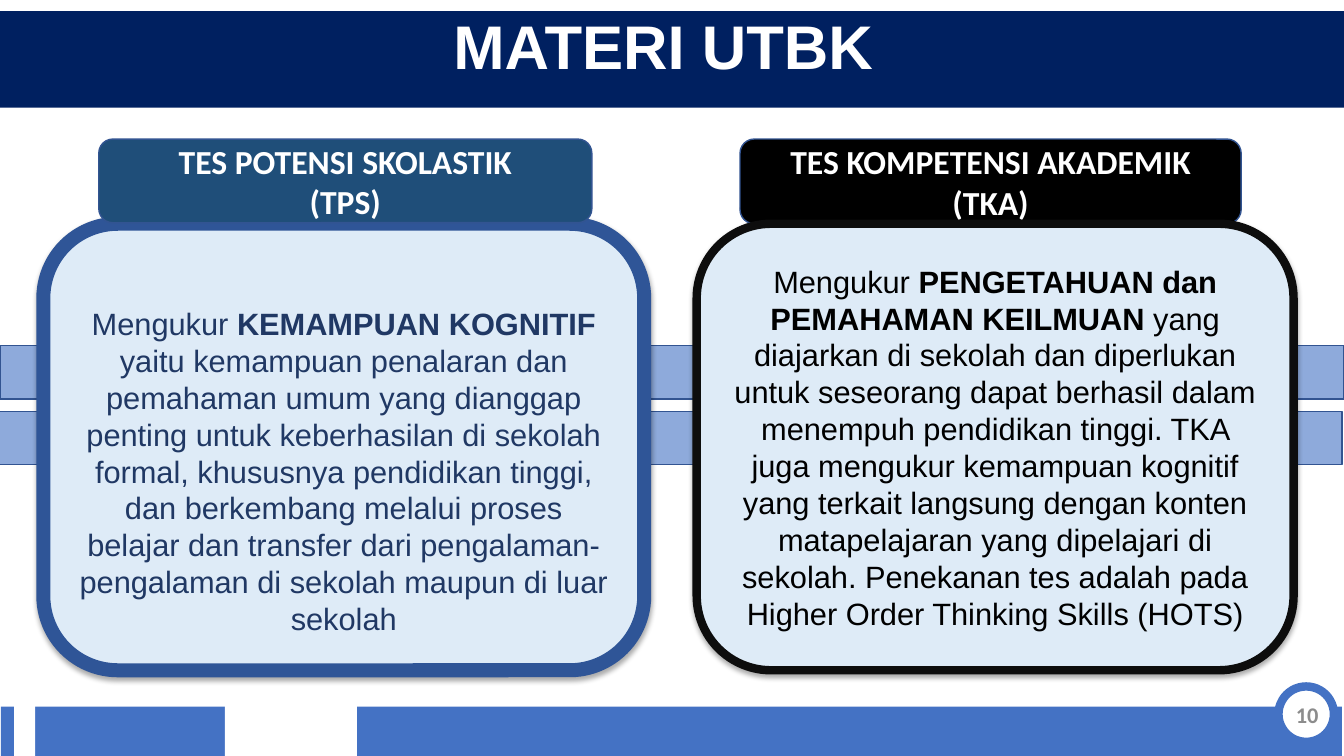
from pptx import Presentation
from pptx.dml.color import RGBColor
from pptx.enum.shapes import MSO_SHAPE as Shape
from pptx.enum.text import MSO_ANCHOR as Anchor, PP_ALIGN as Align
from pptx.oxml import parse_xml
from pptx.oxml.ns import nsdecls, qn
from pptx.util import Inches, Pt
from lxml import etree

WHITE = RGBColor(0xFF, 0xFF, 0xFF)
BLACK = RGBColor(0, 0, 0)
BLUE = RGBColor(0x44, 0x72, 0xC4)
EDGE = RGBColor(0x32, 0x54, 0x91)
NAVY = RGBColor(0x00, 0x20, 0x60)
PALE = RGBColor(0xDE, 0xEB, 0xF7)
ROYAL = RGBColor(0x2F, 0x55, 0x97)
TEAL = RGBColor(0x1F, 0x4E, 0x79)
INK = RGBColor(0x20, 0x38, 0x64)
COAL = RGBColor(0x0D, 0x0D, 0x0D)
GRAY = RGBColor(0x8C, 0x8C, 0x8C)

SHADOW = (
    f'<a:effectLst {nsdecls("a")}>'
    '<a:outerShdw blurRad="44450" dist="27940" dir="5400000" algn="ctr">'
    '<a:srgbClr val="000000"><a:alpha val="32000"/></a:srgbClr>'
    '</a:outerShdw></a:effectLst>'
)


def add_box(slide, kind, box, fill, line=None, width=1):
    shape = slide.shapes.add_shape(kind, *map(Inches, box))
    shape.shadow.inherit = False
    shape.fill.solid()
    shape.fill.fore_color.rgb = fill
    if line is None:
        shape.line.fill.background()
    else:
        shape.line.color.rgb = line
        shape.line.width = Pt(width)
    return shape


def style(para, font, size, color, bold=True):
    para.alignment = Align.CENTER
    for run in para.runs:
        run.font.name = font
        run.font.size = Pt(size)
        run.font.color.rgb = color
        run.font.bold = bold


def add_footer(slide, box):
    left, top, width, height = box
    add_box(slide, Shape.RECTANGLE, box, BLUE)
    for gap, size in ((0.13, 0.21), (2.22, 1.31)):
        add_box(slide, Shape.RECTANGLE, (left + gap, top - 0.1, size, height + 0.1), WHITE)
    add_box(slide, Shape.FLOWCHART_CONNECTOR,
            (left + 12.67, top - 0.2, 0.55, 0.55), WHITE, BLUE, 6)
    place = (left + 12.63, top - 0.17, 0.65, 0.49)
    frame = slide.shapes.add_textbox(*map(Inches, place)).text_frame
    frame.word_wrap = True
    frame.vertical_anchor = Anchor.MIDDLE
    frame.text = "10"
    style(frame.paragraphs[0], "Calibri", 16, GRAY)


def add_band(slide, box):
    band = add_box(slide, Shape.RECTANGLE, box, BLUE, EDGE)
    color = band.fill._xPr.find(qn("a:solidFill"))[0]
    etree.SubElement(color, qn("a:alpha")).set("val", "60000")


def add_title(slide, box):
    frame = add_box(slide, Shape.RECTANGLE, box, NAVY).text_frame
    frame.vertical_anchor = Anchor.TOP
    frame.text = "MATERI UTBK "
    para = frame.paragraphs[0]
    para.line_spacing = 0.9
    style(para, "Arial", 44, WHITE)


def add_header(slide, box, fill, text):
    frame = add_box(slide, Shape.ROUNDED_RECTANGLE, box, fill, EDGE).text_frame
    frame.vertical_anchor = Anchor.MIDDLE
    frame.text = text
    for para in frame.paragraphs:
        style(para, "Calibri", 24, WHITE)


def add_panel(slide, box, line, width, color, parts, inset=0.05):
    panel = add_box(slide, Shape.ROUNDED_RECTANGLE, box, PALE, line, width)
    props = panel.fill._xPr
    props.replace(props.find(qn("a:effectLst")), parse_xml(SHADOW))
    frame = panel.text_frame
    frame.vertical_anchor = Anchor.MIDDLE
    frame.margin_top = Inches(inset)
    para = frame.paragraphs[0]
    for part in parts:
        para.add_run().text = part
    style(para, "Arial", 22, color, False)
    para.runs[1].font.bold = True


def main():
    deck = Presentation()
    deck.slide_width = Inches(13.33)
    deck.slide_height = Inches(7.5)
    slide = deck.slides.add_slide(deck.slide_layouts[6])
    add_footer(slide, (0.01, 7.01, 13.3, 0.55))
    add_band(slide, (-0.02, 4.08, 13.33, 0.53))
    add_band(slide, (0, 3.43, 13.33, 0.53))
    add_title(slide, (0, 0.11, 13.33, 0.96))
    add_panel(slide, (0.43, 2.22, 5.96, 4.43), ROYAL, 10, INK, (
        "Mengukur ",
        "KEMAMPUAN KOGNITIF ",
        "yaitu kemampuan penalaran dan pemahaman umum yang dianggap penting "
        "untuk keberhasilan di sekolah formal, khususnya pendidikan tinggi, "
        "dan berkembang melalui proses belajar dan transfer dari "
        "pengalaman-pengalaman di sekolah maupun di luar sekolah",
    ), 0.52)
    add_header(slide, (0.98, 1.38, 4.89, 0.83), TEAL, "TES POTENSI SKOLASTIK\n(TPS)")
    add_header(slide, (7.34, 1.38, 4.97, 0.84), BLACK, "TES KOMPETENSI AKADEMIK\n(TKA)")
    add_panel(slide, (6.91, 2.22, 5.92, 4.43), COAL, 6, BLACK, (
        "Mengukur ",
        "PENGETAHUAN dan PEMAHAMAN KEILMUAN ",
        "yang diajarkan di sekolah dan diperlukan untuk seseorang dapat "
        "berhasil dalam menempuh pendidikan tinggi. TKA juga mengukur "
        "kemampuan kognitif yang terkait langsung dengan konten "
        "matapelajaran yang dipelajari di sekolah. Penekanan tes adalah "
        "pada Higher Order Thinking Skills (HOTS)",
    ))
    deck.save("out.pptx")


if __name__ == "__main__":
    main()
